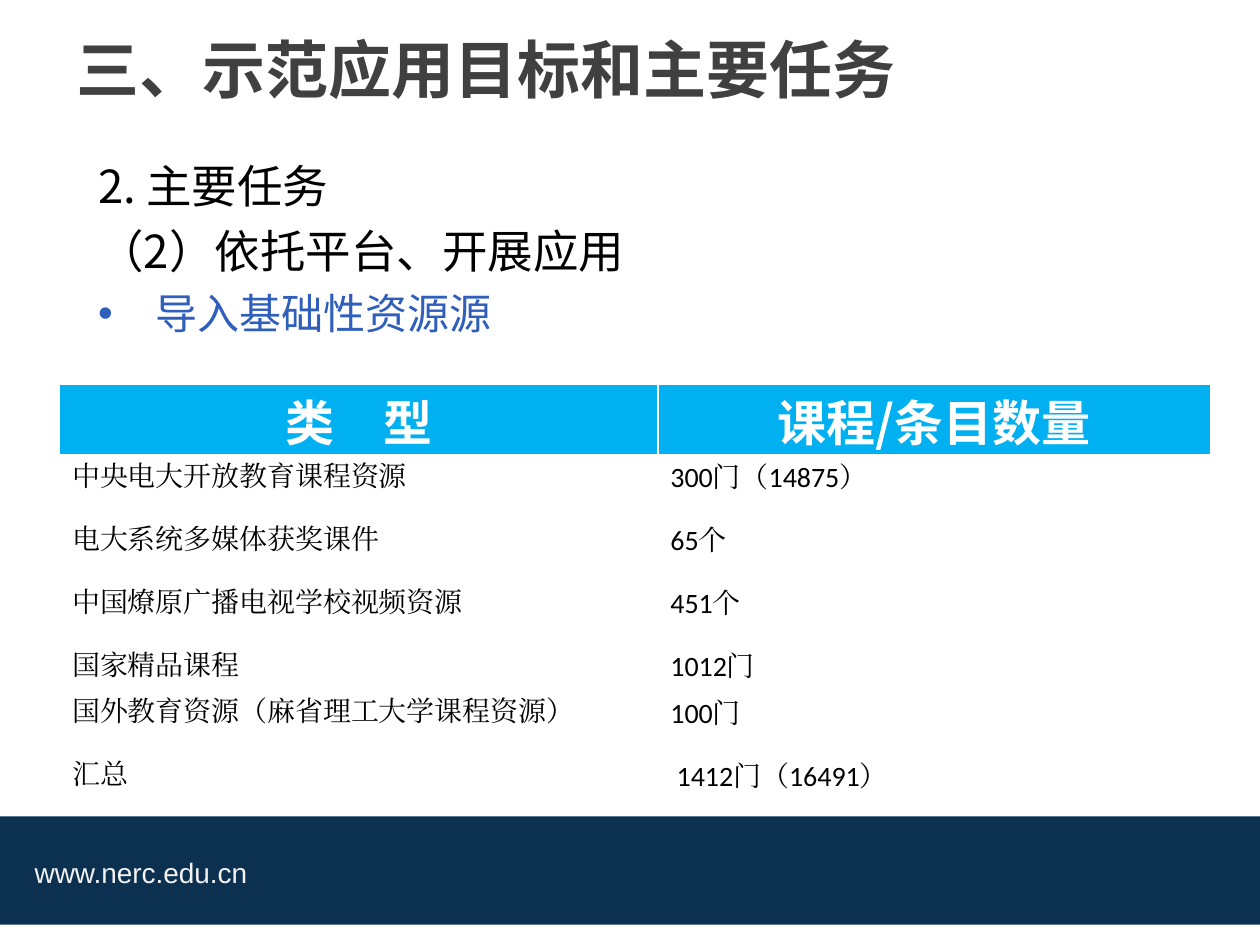
"""Build the slide on demonstration goals and main tasks."""
from lxml import etree
from pptx import Presentation
from pptx import util as u
from pptx.dml.color import RGBColor
from pptx.enum import shapes, text
from pptx.oxml.ns import qn

NOTO = "Noto Sans CJK SC"


def style(p, size, color, latin, asian, bold=False):
    for r in p.runs:
        r.font.size, r.font.bold, r.font.name = u.Pt(size), bold, latin
        r.font.color.rgb = RGBColor.from_string(color)
        etree.SubElement(r.font._element, qn("a:ea"), typeface=asian)


def add_text(left, top, width, height, lines, wrap=True):
    tf = s.shapes.add_textbox(u.Cm(left), u.Cm(top), u.Cm(width), u.Cm(height)).text_frame
    tf.word_wrap = wrap
    tf.text = "\n".join(lines)
    return tf


prs = Presentation()
prs.slide_width, prs.slide_height = u.Cm(25.4), u.Cm(19.05)
s = prs.slides.add_slide(prs.slide_layouts[6])

sp = s.shapes.add_shape(shapes.MSO_SHAPE.RECTANGLE, 0, u.Cm(16.46), prs.slide_width, u.Cm(2.18))
sp.shadow.inherit = False
sp.fill.solid()
sp.fill.fore_color.rgb = RGBColor.from_string("0C3150")
sp.line.fill.background()

tf = add_text(0.45, 17.12, 4.85, 0.94, ["www.nerc.edu.cn"], wrap=False)
style(tf.paragraphs[0], 16, "F2F2F2", "Arial", "Arial")

tf = add_text(1.3, -0.08, 18.54, 2.39, ["三、示范应用目标和主要任务"])
tf.vertical_anchor = text.MSO_ANCHOR.MIDDLE
tf.paragraphs[0].line_spacing = u.Pt(57.6)
style(tf.paragraphs[0], 36, "404040", NOTO, NOTO, bold=True)

tf = add_text(1.73, 3.18, 23.01, 4.57, ["2. 主要任务", "（2）依托平台、开展应用", "导入基础性资源源"])
tf.margin_top = 0
for p, size, color in zip(tf.paragraphs, (26, 26, 24), ("000000", "000000", "2F5EBB")):
    style(p, size, color, NOTO, NOTO)
for p in tf.paragraphs[1:]:
    p.space_before = u.Pt(6)
pPr = tf.paragraphs[2]._p.get_or_add_pPr()
pPr.set("marL", str(u.Cm(1.15)))
pPr.set("indent", str(-u.Cm(1.15)))
etree.SubElement(pPr, qn("a:buFont"), typeface="Arial")
etree.SubElement(pPr, qn("a:buChar"), char="•")

rows = [
    ("类　型", "课程/条目数量"),
    ("中央电大开放教育课程资源", "300门（14875）"),
    ("电大系统多媒体获奖课件", "65个"),
    ("中国燎原广播电视学校视频资源", "451个"),
    ("国家精品课程", "1012门"),
    ("国外教育资源（麻省理工大学课程资源）", "100门"),
    ("汇总", "1412门（16491）"),
]
heights = [1.42, 1.27, 1.27, 1.27, 0.91, 1.27, 0.91]
widths = [12.06, 11.14]
table = s.shapes.add_table(len(rows), len(widths), u.Cm(1.2), u.Cm(7.75),
                           u.Cm(sum(widths)), u.Cm(sum(heights))).table
for column, width in zip(table.columns, widths):
    column.width = u.Cm(width)

for i, (row, height) in enumerate(zip(rows, heights)):
    table.rows[i].height = u.Cm(height)
    for j, words in enumerate(row):
        cell = table.cell(i, j)
        cell.text = words
        p = cell.text_frame.paragraphs[0]
        cell.fill.solid()
        cell.fill.fore_color.rgb = RGBColor.from_string("FFFFFF" if i else "00B0F0")
        if i:
            style(p, 16, "000000", ("Times New Roman", "Calibri")[j], "Times New Roman")
        else:
            cell.margin_top = cell.margin_bottom = 0
            cell.vertical_anchor = text.MSO_ANCHOR.MIDDLE
            p.alignment = text.PP_ALIGN.CENTER
            style(p, 28, "FFFFFF", NOTO, NOTO, bold=True)
        tcPr = cell._tc.get_or_add_tcPr()
        for k, side in enumerate(("lnL", "lnR", "lnT", "lnB")):
            ln = etree.Element(qn("a:" + side), w=str(u.Pt(1)))
            fill = etree.SubElement(ln, qn("a:solidFill"))
            etree.SubElement(fill, qn("a:srgbClr"), val="FFFFFF")
            tcPr.insert(k, ln)
table.cell(len(rows) - 1, 1).margin_left = u.Cm(0.38)

prs.save("out.pptx")
